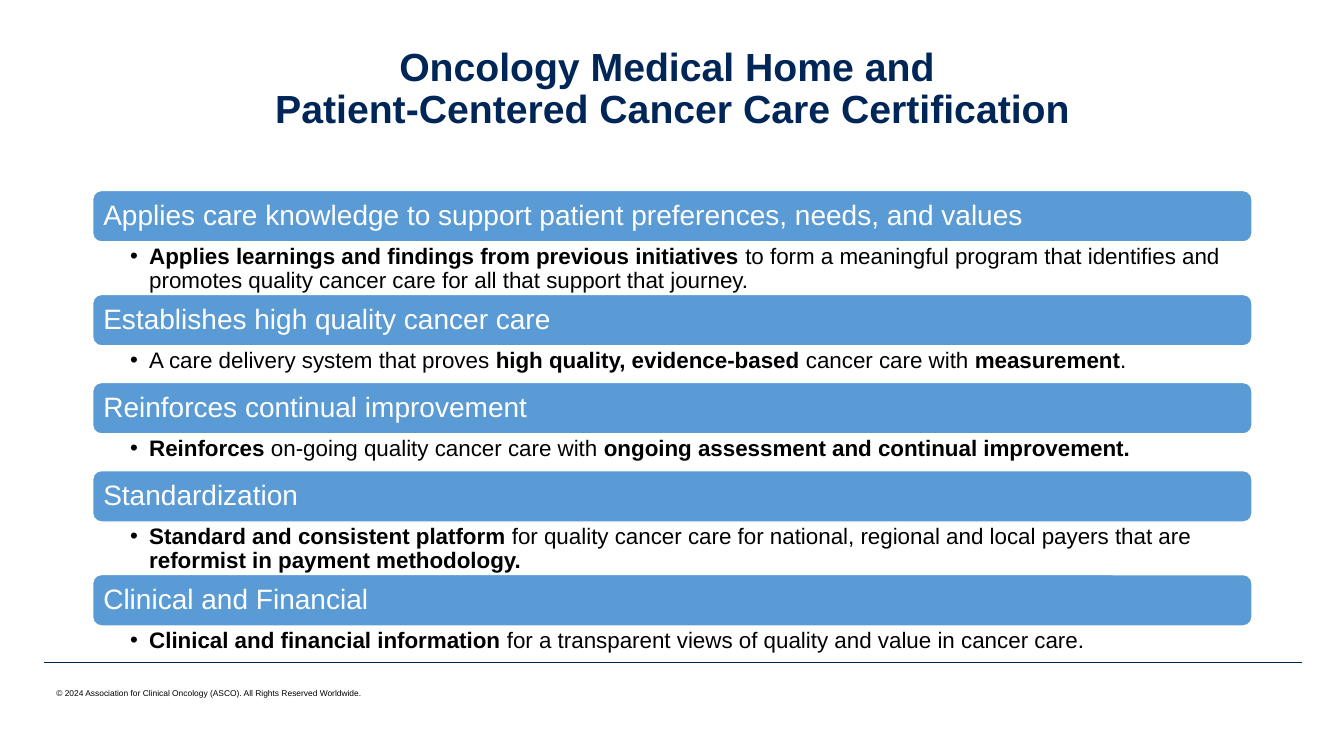
from lxml.etree import SubElement
from pptx import Presentation
from pptx.dml.color import RGBColor
from pptx.enum.shapes import MSO_CONNECTOR, MSO_SHAPE
from pptx.enum.text import MSO_ANCHOR, PP_ALIGN
from pptx.oxml.ns import qn
from pptx.util import Inches, Pt

SLIDE_WIDTH, SLIDE_HEIGHT = Inches(13.33), Inches(7.5)
COLORS = {"navy": "002557", "bar": "5B9BD5", "white": "FFFFFF", "black": "000000"}
FONT = "Arial"

# Shares of the slide's size, in percent
CONTENT_LEFT, CONTENT_WIDTH = 6.9, 86.25
FIRST_BAR_TOP, BAR_HEIGHT = 25.2, 6.8
DETAIL_HEIGHTS = {1: 4.85, 2: 6.95}  # by number of text lines

TITLE = "*Oncology Medical Home and \vPatient-Centered Cancer Care Certification*"
COPYRIGHT = ("© 2024 Association for Clinical Oncology (ASCO). "
             "All Rights Reserved Worldwide.")

# Heading, detail with bold parts between asterisks, number of detail lines
SECTIONS = [
    ("Applies care knowledge to support patient preferences, needs, and values",
     "*Applies learnings and findings from previous initiatives *to form a "
     "meaningful program that identifies and promotes quality cancer care for "
     "all that support that journey.", 2),
    ("Establishes high quality cancer care",
     "A care delivery system that proves *high quality, evidence-based *cancer "
     "care with *measurement*.", 1),
    ("Reinforces continual improvement",
     "*Reinforces* on-going quality cancer care with *ongoing assessment and "
     "continual improvement.*", 1),
    ("Standardization",
     "*Standard and consistent platform *for quality cancer care for national, "
     "regional and local payers that are *reformist in payment methodology.*", 2),
    ("Clinical and Financial",
     "*Clinical and financial information *for a transparent views of quality "
     "and value in cancer care.", 1),
]


def across(percent):
    return round(SLIDE_WIDTH * percent / 100)


def down(percent):
    return round(SLIDE_HEIGHT * percent / 100)


def area(left, top, width, height):
    return across(left), down(top), across(width), down(height)


def color(name):
    return RGBColor.from_string(COLORS[name])


def add_bullet(paragraph, indent):
    properties = paragraph._p.get_or_add_pPr()
    properties.set("marL", str(indent))
    properties.set("indent", str(-indent))
    SubElement(properties, qn("a:buFont"), typeface=FONT)
    SubElement(properties, qn("a:buChar"), char="•")


def write(shape, text, size, ink="black", align=PP_ALIGN.LEFT, spacing=0.9,
          anchor=MSO_ANCHOR.MIDDLE, insets=(0.1, 0.05, 0.1, 0.05), bullet=False):
    """Fill a shape with one paragraph; asterisks switch bold on and off."""
    frame = shape.text_frame
    frame.word_wrap = True
    frame.vertical_anchor = anchor
    (frame.margin_left, frame.margin_top,
     frame.margin_right, frame.margin_bottom) = map(Inches, insets)
    paragraph = frame.paragraphs[0]
    if bullet:
        add_bullet(paragraph, Inches(0.19))
    paragraph.alignment = align
    paragraph.line_spacing = spacing
    for position, part in enumerate(text.split("*")):
        for line_number, line in enumerate(part.split("\v")):
            if line_number:
                paragraph.add_line_break()
            if line:
                run = paragraph.add_run()
                run.text = line
                run.font.name = FONT
                run.font.size = Pt(size)
                run.font.bold = position % 2 == 1
                run.font.color.rgb = color(ink)


def add_text(slide, place, text, **style):
    write(slide.shapes.add_textbox(*place), text, **style)


def add_heading_bar(slide, top, heading):
    bar = slide.shapes.add_shape(
        MSO_SHAPE.ROUNDED_RECTANGLE,
        *area(CONTENT_LEFT, top, CONTENT_WIDTH, BAR_HEIGHT))
    bar.shadow.inherit = False
    bar.fill.solid()
    bar.fill.fore_color.rgb = color("bar")
    bar.line.color.rgb = color("white")
    bar.line.width = Pt(1)
    write(bar, heading, size=20, ink="white", insets=(0.08,) * 4)


def add_sections(slide):
    top = FIRST_BAR_TOP
    for heading, detail, lines in SECTIONS:
        add_heading_bar(slide, top, heading)
        top += BAR_HEIGHT
        height = DETAIL_HEIGHTS[lines]
        add_text(slide, area(CONTENT_LEFT, top, CONTENT_WIDTH, height), detail,
                 size=16, anchor=MSO_ANCHOR.TOP, bullet=True,
                 insets=(0.37, 0.03, 0.16, 0.03))
        top += height


def add_footer_rule(slide, left, right, height):
    rule = slide.shapes.add_connector(
        MSO_CONNECTOR.STRAIGHT,
        across(left), down(height), across(right), down(height))
    rule.line.color.rgb = color("navy")
    rule.line.width = Pt(0.25)
    SubElement(rule._element.spPr, qn("a:effectLst"))


def main():
    presentation = Presentation()
    presentation.slide_width = SLIDE_WIDTH
    presentation.slide_height = SLIDE_HEIGHT
    slide = presentation.slides.add_slide(presentation.slide_layouts[6])
    add_footer_rule(slide, left=3.3, right=96.85, height=87.6)
    add_text(slide, area(CONTENT_LEFT, 3.6, CONTENT_WIDTH, 16.55), TITLE,
             size=28, ink="navy", align=PP_ALIGN.CENTER)
    add_sections(slide)
    add_text(slide, area(3.45, 88.95, 33.75, 5.35), COPYRIGHT, size=6, spacing=1.0)
    presentation.save("out.pptx")


if __name__ == "__main__":
    main()
